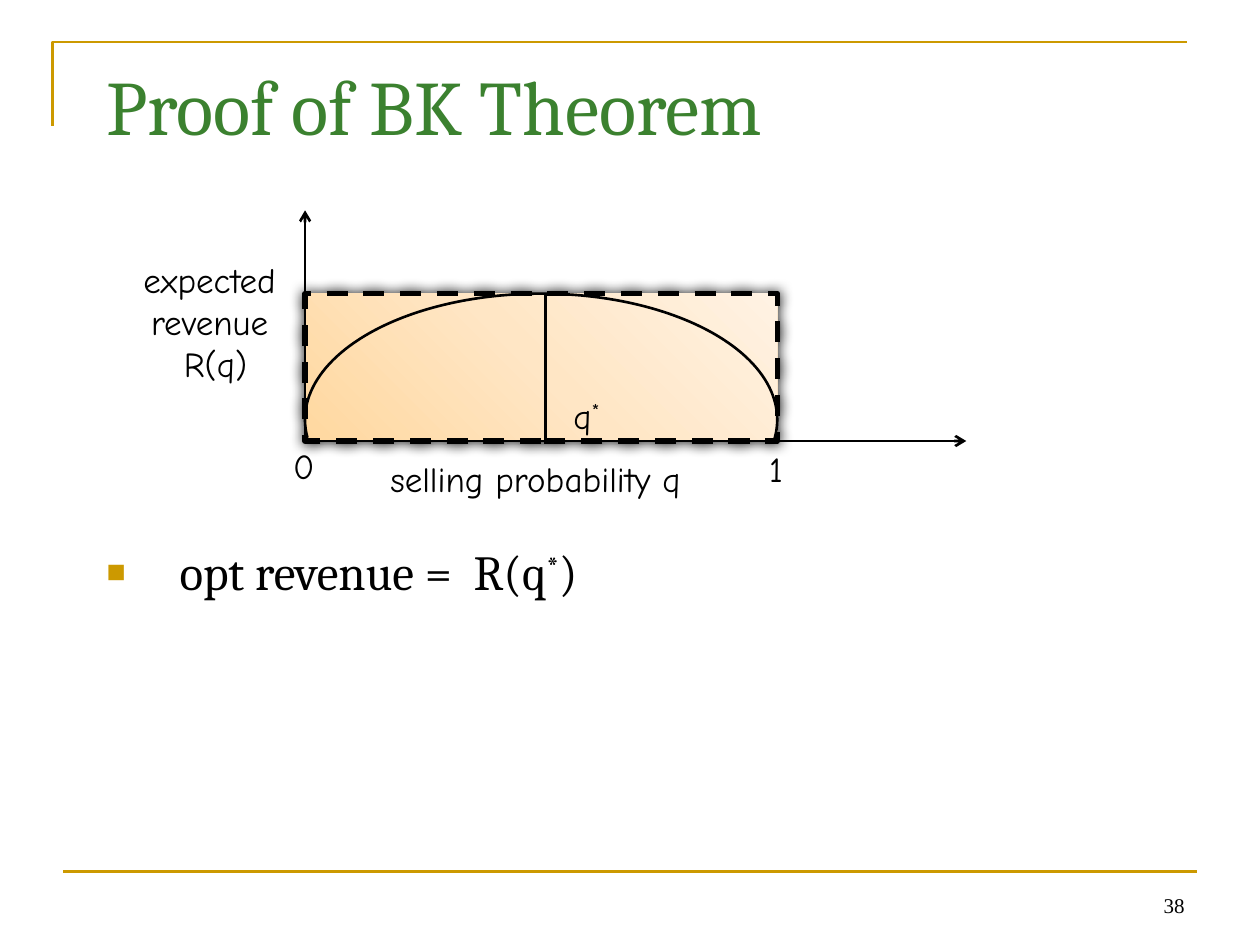
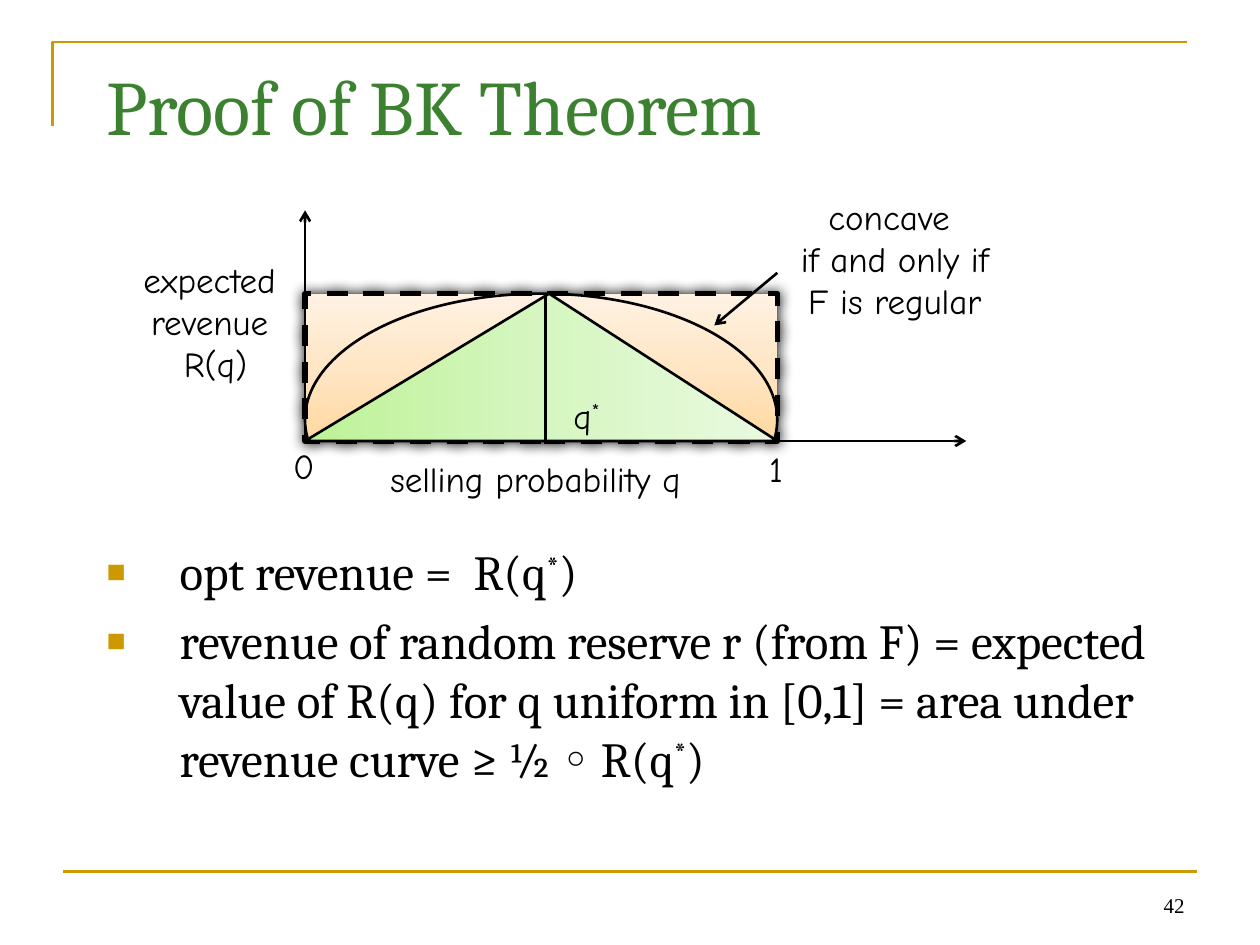
from lxml.etree import SubElement
from copy import deepcopy
from pptx import Presentation
from pptx.dml.color import RGBColor
from pptx.enum.dml import MSO_LINE_DASH_STYLE as Dash
from pptx.enum.shapes import MSO_CONNECTOR as Connector, MSO_SHAPE as Shape
from pptx.enum.text import MSO_ANCHOR as Anchor, PP_ALIGN as Align
from pptx.oxml.ns import qn
from pptx.util import Cm, Pt

GOLD, GREEN, BLACK = "CC9900", "3B812F", "000000"
ORANGES = ["FFD8A0", "FFE6C5", "FFF2E3"]
LIMES = ["BEF297", "D5F6C0", "EAFAE0"]
LEFT, RIGHT, TOP, BASE, PEAK = 6.15, 15.67, 5.92, 8.89, 11.0
PLOT = (LEFT, TOP, RIGHT - LEFT, BASE - TOP)


def colour(code):
    """Turn a hex string into a colour."""
    return RGBColor.from_string(code)


class Painter:
    """Holds the style and draws on the current slide."""

    serif, hand, number = "Cambria", "Comic Neue", "Times New Roman"

    def __init__(self, deck):
        self.deck = deck
        self.page = None

    def new_page(self, title, number):
        """Add a slide with its frame lines, title and number."""
        self.page = self.deck.slides.add_slide(self.deck.slide_layouts[6])
        outline = self.page.shapes.build_freeform(Cm(1.06), Cm(2.54), scale=1.0)
        outline.add_line_segments([(Cm(1.06), Cm(0.85)), (Cm(23.92), Cm(0.85))], close=False)
        corner = outline.convert_to_shape()
        corner.shadow.inherit = False
        corner.fill.background()
        self.stroke(corner, GOLD)
        self.line((1.27, 17.57), (24.13, 17.57), GOLD)
        self.text([title], (1.9, 1.06, 21.59, 3.18), self.serif, 44, GREEN)
        self.text([number], (18.2, 17.36, 5.93, 1.27), self.number, 12,
                  align=Align.RIGHT, anchor=Anchor.BOTTOM)

    def stroke(self, shape, code=BLACK, width=1.5):
        """Set the outline of a shape or connector."""
        shape.line.color.rgb = colour(code)
        shape.line.width = Pt(width)

    def line(self, start, end, code=BLACK, arrow=False):
        """Draw a straight line, with an arrowhead at its end if asked."""
        connector = self.page.shapes.add_connector(
            Connector.STRAIGHT, *[Cm(value) for value in (*start, *end)])
        self.stroke(connector, code)
        if arrow:
            SubElement(connector.line._get_or_add_ln(), qn("a:tailEnd"), type="arrow")
        SubElement(connector._element.spPr, qn("a:effectLst"))

    def shape(self, kind, place, adjustments=(), width=1.5):
        """Add an unfilled preset shape with a black outline."""
        shape = self.page.shapes.add_shape(kind, *[Cm(value) for value in place])
        shape.shadow.inherit = False
        for index, value in enumerate(adjustments):
            shape.adjustments[index] = value
        shape.fill.background()
        self.stroke(shape, width=width)
        return shape

    def gradient(self, shape, codes, angle):
        """Fill a shape with three evenly spaced colours."""
        shape.fill.gradient()
        shape.fill.gradient_angle = angle
        first = shape._element.spPr.find(".//" + qn("a:gs"))
        first.addnext(deepcopy(first))
        for index, (stop, code) in enumerate(zip(shape.fill.gradient_stops, codes)):
            stop.color.rgb = colour(code)
            stop.position = index / 2

    def glow(self, shape):
        """Put a soft dark shadow all around a shape."""
        effects = shape._element.spPr.find(qn("a:effectLst"))
        shadow = SubElement(effects, qn("a:outerShdw"), blurRad=str(Cm(0.28)),
                            dist="0", algn="ctr", rotWithShape="0")
        SubElement(shadow, qn("a:srgbClr"), val=BLACK)

    def text(self, lines, place, font, size, code=BLACK, align=Align.LEFT,
             anchor=Anchor.TOP, wrap=True):
        """Add a text box; a star in a line is raised."""
        box = self.page.shapes.add_textbox(*[Cm(value) for value in place])
        frame = box.text_frame
        frame.word_wrap = wrap
        frame.vertical_anchor = anchor
        frame.text = "\n".join(lines)
        for para, line in zip(frame.paragraphs, lines):
            para.alignment = align
            before, star, after = line.partition("*")
            para.text = before
            for part in filter(None, (star, after)):
                para.add_run().text = part
            for span in para.runs:
                span.font.name = font
                span.font.size = Pt(size)
                span.font.color.rgb = colour(code)
                if span.text == "*":
                    span.font._element.set("baseline", "30000")
        return frame

    def label(self, lines, place, align=Align.CENTER):
        """Add a handwritten label that does not wrap."""
        self.text(lines, place, self.hand, 20, align=align, wrap=False)

    def bullets(self, lines):
        """Add the square-bulleted body text."""
        frame = self.text(lines, (1.9, 10.8, 23.06, 6.55), self.serif, 28)
        for para in frame.paragraphs:
            para.space_before = Pt(5.6)
            style = para._p.get_or_add_pPr()
            style.set("marL", str(Cm(1.47)))
            style.set("indent", str(-Cm(1.47)))
            SubElement(SubElement(style, qn("a:buClr")), qn("a:srgbClr"), val=GOLD)
            SubElement(style, qn("a:buSzPct"), val="65000")
            SubElement(style, qn("a:buFont"), typeface="Arial")
            SubElement(style, qn("a:buChar"), char="■")

    def revenue_plot(self, angle, triangle=False):
        """Draw the revenue curve inside its bounding rectangle."""
        bounds = self.shape(Shape.RECTANGLE, PLOT, width=3)
        bounds.line.dash_style = Dash.DASH
        self.gradient(bounds, ORANGES, angle)
        self.glow(bounds)
        if triangle:
            area = self.shape(Shape.ISOSCELES_TRIANGLE, PLOT, [0.517])
            self.gradient(area, LIMES, 0)
        curve = self.shape(Shape.ARC, (LEFT, TOP, RIGHT - LEFT, 5.08), [104.489, 2.66])
        curve._element.spPr.find(qn("a:xfrm")).set("flipH", "1")
        self.line((LEFT, BASE), (LEFT, 4.24), arrow=True)
        self.line((LEFT, BASE), (19.48, BASE), arrow=True)
        self.line((PEAK, BASE), (PEAK, TOP))
        self.label(["selling probability q"], (7.62, 9.1, 6.58, 1.11), Align.LEFT)
        self.label(["expected ", "revenue ", "R(q)"], (2.54, 5.08, 3.61, 2.82))
        self.label(["0"], (5.66, 8.84, 0.91, 1.11))
        self.label(["1"], (15.19, 8.89, 0.91, 1.11))
        self.label(["q*"], (11.28, 7.82, 1.09, 1.11))


def main():
    """Build both slides and save the deck."""
    deck = Presentation()
    deck.slide_width, deck.slide_height = Cm(25.4), Cm(19.05)
    painter = Painter(deck)
    title = "Proof of BK Theorem"
    optimum = "opt revenue =  R(q*)"

    painter.new_page(title, "38")
    painter.revenue_plot(angle=45)
    painter.bullets([optimum])

    painter.new_page(title, "42")
    painter.revenue_plot(angle=90, triangle=True)
    painter.line((RIGHT, 5.5), (14.4, 6.56), arrow=True)
    painter.label(["concave ", "if and only if", "F is regular"], (15.88, 3.81, 4.32, 2.82))
    painter.bullets([optimum, "revenue of random reserve r (from F) = expected value of R(q) "
                     "for q uniform in [0,1] = area under revenue curve ≥ ½ ◦ R(q*)"])
    deck.save("out.pptx")


if __name__ == "__main__":
    main()
